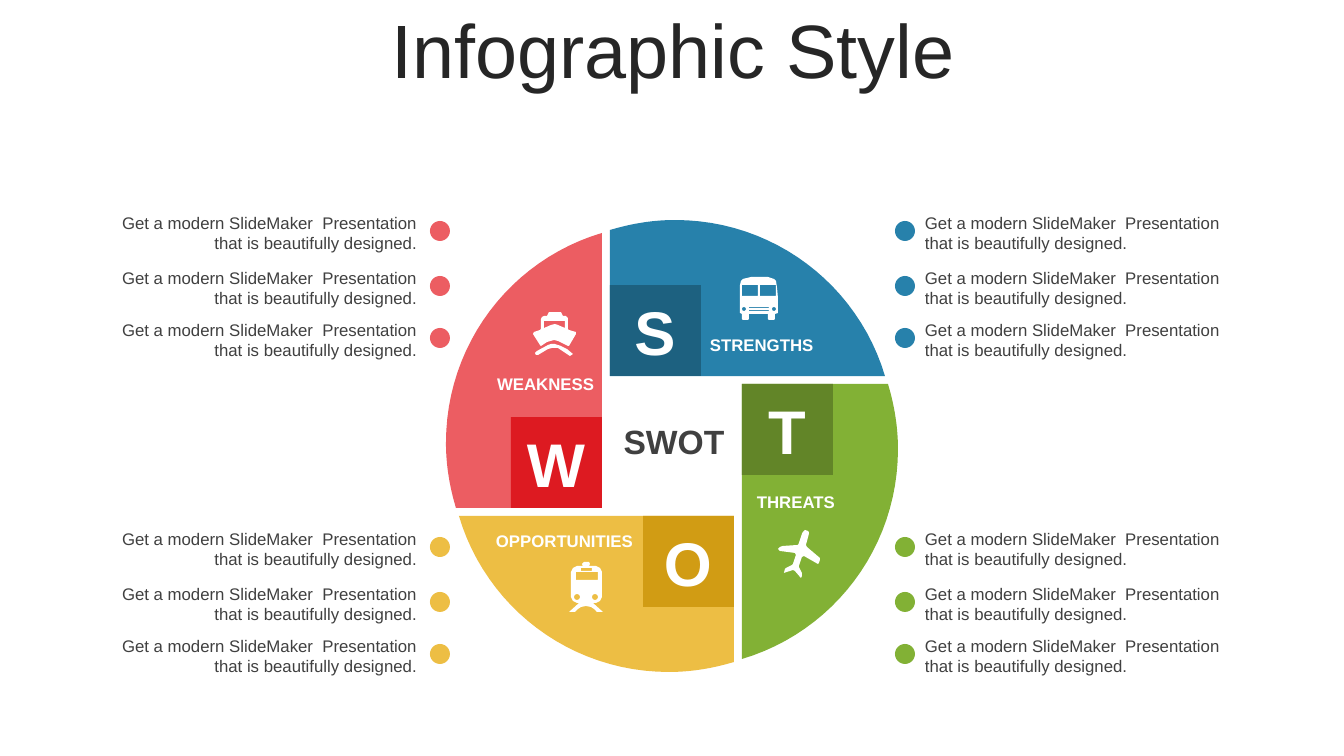
from math import cos, pi, sin

from pptx import Presentation
from pptx.dml.color import RGBColor
from pptx.enum.shapes import MSO_SHAPE as SHAPE
from pptx.enum.text import MSO_ANCHOR as ANCHOR, PP_ALIGN as ALIGN
from pptx.util import Pt

SCALE = 914400 / 100.8  # EMU per px
WHITE, GREY, TITLE = "FFFFFF", "404040", "262626"
RED, GOLD, BLUE, GREEN = "EC5D62", "EDBE44", "2781AB", "82B135"
BULLET = "Get a modern SlideMaker  Presentation that is beautifully designed."
SQUARE = 91

# Quarter turns: letter, petal colour, square colour, rotation about the centre
PETALS = [
    ("O", GOLD, "D19C14", lambda x, y: (x, y)),
    ("T", GREEN, "628528", lambda x, y: (y, -x)),
    ("S", BLUE, "1D6180", lambda x, y: (-x, -y)),
    ("W", RED, "DD1A21", lambda x, y: (-y, x)),
]

# Petal captions: text, box, alignment
CAPTIONS = [
    ("STRENGTHS", (700, 330, 177, 30), ALIGN.LEFT),
    ("WEAKNESS", (440, 369, 164, 30), ALIGN.RIGHT),
    ("OPPORTUNITIES", (472, 526, 171, 30), ALIGN.RIGHT),
    ("THREATS", (747, 487, 156, 30), ALIGN.LEFT),
]


def px(n):
    return round(n * SCALE)


def paint(shape, color):
    shape.shadow.inherit = False
    shape.fill.solid()
    shape.fill.fore_color.rgb = RGBColor.from_string(color)
    shape.line.fill.background()


def write(tf, text, size, color, align, bold=False):
    tf.word_wrap = True
    p = tf.paragraphs[0]
    p.text, p.alignment = text, align
    p.font.name, p.font.size, p.font.bold = "Arial", Pt(size), bold
    p.font.color.rgb = RGBColor.from_string(color)
    return p


def add_text(s, box, text, size, color, align, bold=False):
    tb = s.shapes.add_textbox(*map(px, box))
    write(tb.text_frame, text, size, color, align, bold)


def add_rect(s, kind, box, color):
    paint(s.shapes.add_shape(kind, *map(px, box)), color)


def add_outline(s, left, top, contours, color):
    """Draw closed contours as one shape; inner contours become holes."""
    builder = None
    for contour in contours:
        first, *rest = [(px(left + x), px(top + y)) for x, y in contour]
        if builder is None:
            builder = s.shapes.build_freeform(*first, scale=1.0)
        else:
            builder.move_to(*first)
        builder.add_line_segments(rest, close=True)
    paint(builder.convert_to_shape(), color)


def curve(a, b, c, d, steps=24):
    """Points of a cubic curve from a to d, without a itself."""
    points = []
    for i in range(1, steps + 1):
        t = i / steps
        weights = ((1 - t) ** 3, 3 * t * (1 - t) ** 2, 3 * t * t * (1 - t), t ** 3)
        points.append(tuple(sum(w * q[k] for w, q in zip(weights, (a, b, c, d)))
                            for k in (0, 1)))
    return points


def rect(x, y, w, h):
    return [(x, y), (x + w, y), (x + w, y + h), (x, y + h)]


def circle(x, y, r, steps=16):
    return [(x + r * cos(2 * pi * i / steps), y + r * sin(2 * pi * i / steps))
            for i in range(steps)]


# Icons: left, top, contours
BUS = (739, 277, [
    [(38, 10), (39, 21), (39, 36), (36, 37), (36, 42), (35, 43), (30, 43), (29, 42),
     (29, 37), (10, 37), (10, 42), (9, 43), (4, 43), (3, 42), (3, 37), (1, 36),
     (1, 8), (2, 4), (4, 2), (12, 0), (29, 0), (35, 2), (37, 4)],
    rect(3, 8, 16, 11), rect(21, 8, 16, 11),
    rect(10, 30, 20, 1), rect(10, 33, 20, 1),
    circle(5, 32, 2), circle(35, 32, 2),
])
SHIP = (533, 312, [
    [(22, 32), (28, 34), (34, 37), (40, 42), (37, 44), (28, 38), (25, 36), (22, 36),
     (19, 36), (15, 37), (5, 43), (3, 43), (2, 41), (4, 39), (15, 33), (18, 32)],
    [(11, 9), (32, 9), (32, 16), (25, 13), (22, 12), (18, 13), (11, 16)],
    [(16, 0), (28, 0), (29, 2), (30, 4), (33, 4), (35, 6), (35, 17), (36, 18),
     (43, 20), (43, 22), (36, 34), (35, 34), (25, 29), (21, 28), (14, 30), (8, 34),
     (7, 33), (0, 22), (1, 20), (7, 18), (8, 17), (8, 7), (9, 5), (11, 4), (14, 4),
     (15, 2)],
])
PLANE = (777, 529, [
    [(24, 49), (18, 42), (16, 41), (7, 44), (8, 40), (9, 39), (15, 36), (16, 35),
     (19, 26), (18, 24), (3, 22), (1, 20), (3, 18), (6, 17), (21, 16), (22, 14),
     (25, 5), (26, 3), (28, 1), (31, 2), (32, 3), (32, 5), (29, 16), (30, 18),
     (43, 29), (43, 31), (42, 34), (41, 35), (27, 27), (25, 28), (22, 37), (22, 38),
     (25, 44), (25, 47)],
])
TRAIN = (569, 562, [
    [(8, 4), (27, 4), (31, 6), (33, 10), (33, 35), (31, 39), (27, 41), (24, 41),
     (34, 50), (28, 50), (25, 47), (22, 45), (17, 44), (12, 45), (9, 47), (6, 50),
     (0, 50), (10, 41), (8, 41), (4, 39), (2, 35), (2, 10), (4, 6)],
    [(15, 0), (20, 0), (21, 2), (20, 4), (14, 4), (13, 2)],
    rect(7, 10, 22, 8), rect(12, 6, 11, 3),
    circle(8, 35, 3), circle(26, 35, 3),
])


def add_title(s, box, text):
    title = s.shapes.title
    title.left, title.top, title.width, title.height = map(px, box)
    tf = title.text_frame
    tf.vertical_anchor = ANCHOR.MIDDLE
    p = write(tf, text, 54, TITLE, ALIGN.CENTER)
    p.line_spacing = 0.9


def add_wheel(s, cx, cy):
    # Petal below the centre; the others are quarter turns of it
    arc = [(62, 216), (42, 222), (20, 226), (-3, 226), (-102, 226), (-186, 161), (-213, 70)]
    petal = [(-213, 70), (62, 70), arc[0], *curve(*arc[:4]), *curve(*arc[3:])]
    for _, color, _, turn in PETALS:
        add_outline(s, cx, cy, [[turn(x, y) for x, y in petal]], color)

    # Lettered squares at the inner corners
    for letter, _, color, turn in PETALS:
        mx, my = turn(16.5, 115.5)
        left, top = cx + mx - SQUARE / 2, cy + my - SQUARE / 2
        add_rect(s, SHAPE.RECTANGLE, (left, top, SQUARE, SQUARE), color)
        add_text(s, (left + 4, top + 4, 82, 84), letter, 44, WHITE, ALIGN.CENTER, True)

    # Captions, centre word and icons
    for text, box, align in CAPTIONS:
        add_text(s, box, text, 12, WHITE, align, True)
    add_text(s, (cx - 63, cy - 30, 130, 50), "SWOT", 24, GREY, ALIGN.CENTER, True)
    for icon in (PLANE, SHIP, BUS, TRAIN):
        add_outline(s, *icon, WHITE)


def add_bullets(s, box, dot_x, color, align):
    left, top, width = box
    for dy in (0, 55, 107):
        add_rect(s, SHAPE.FLOWCHART_CONNECTOR, (dot_x, top + dy + 13, 20, 20), color)
        add_text(s, (left, top + dy, width, 50), BULLET, 12, GREY, align)


def main():
    prs = Presentation()
    prs.slide_width, prs.slide_height = px(1344), px(756)
    s = prs.slides.add_slide(prs.slide_layouts[5])
    add_title(s, (35, 14, 1276, 80), "Infographic Style")
    add_wheel(s, 672, 446)
    for top, left_color, right_color in ((208, RED, BLUE), (524, GOLD, GREEN)):
        add_bullets(s, (87, top, 340), 430, left_color, ALIGN.RIGHT)
        add_bullets(s, (915, top, 342), 895, right_color, ALIGN.LEFT)
    prs.save("out.pptx")


if __name__ == "__main__":
    main()
